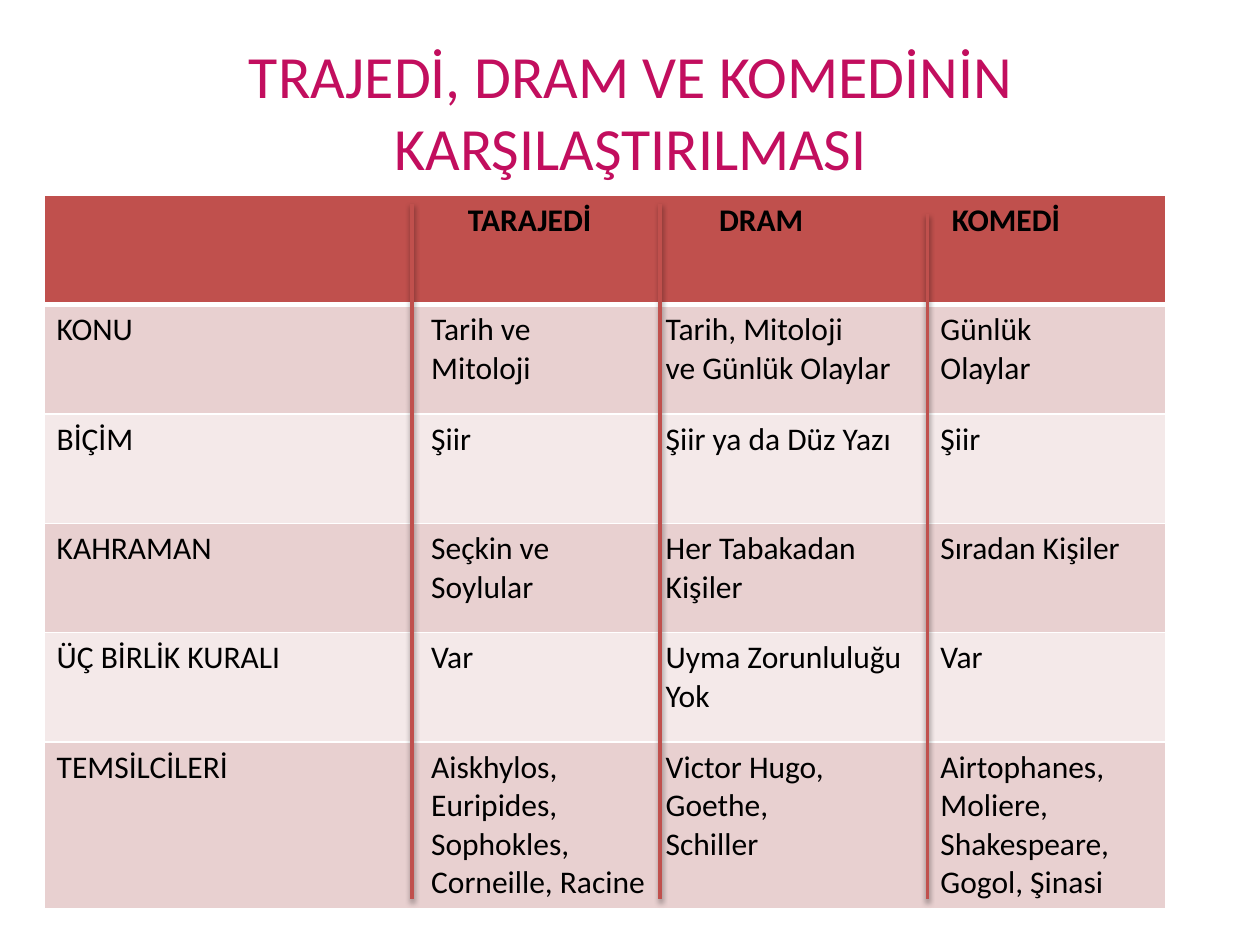
"""Build a slide comparing tragedy, drama and comedy in a table."""
from lxml import etree
from pptx import Presentation
from pptx.dml.color import RGBColor
from pptx.enum import shapes, text
from pptx.oxml import ns, parse_xml
from pptx.util import Pt

COLORS = {
    "title": "C20E5E",
    "text": "000000",
    "accent": "C0504D",
    "dark_band": "E8D0D0",
    "light_band": "F4E9E9",
    "border": "FFFFFF",
    "shadow": "000000",
}
FONT = "Calibri"
HEADER_STOPS = (235, 378.5, 511.5)
BODY_STOPS = (214, 348, 505)
ROW_HEIGHT = 62.5
DIVIDERS = ((235.4, 116.6), (377.3, 116.6), (529.9, 122.4))
DIVIDER_END = 514
TITLE = "TRAJEDİ, DRAM VE KOMEDİNİN KARŞILAŞTIRILMASI"
ROWS = [
    [("", "TARAJEDİ", "DRAM", "KOMEDİ")],
    [("KONU", "Tarih ve", "Tarih, Mitoloji", "Günlük"),
     ("", "Mitoloji", "ve Günlük Olaylar", "Olaylar")],
    [("BİÇİM", "Şiir", "Şiir ya da Düz Yazı", "Şiir")],
    [("KAHRAMAN", "Seçkin ve", "Her Tabakadan", "Sıradan Kişiler"),
     ("", "Soylular", "Kişiler")],
    [("ÜÇ BİRLİK KURALI", "Var", "Uyma Zorunluluğu", "Var"),
     ("", "", "Yok")],
    [("TEMSİLCİLERİ", "Aiskhylos,", "Victor Hugo,", "Airtophanes,"),
     ("", "Euripides,", "Goethe,", "Moliere,"),
     ("", "Sophokles,", "Schiller", "Shakespeare,"),
     ("", "Corneille, Racine", "", "Gogol, Şinasi")],
]


def rgb(name):
    return RGBColor.from_string(COLORS[name])


def apply(target, formats):
    for attribute, value in formats.items():
        setattr(target, attribute, value)


def style_font(font, size, color, bold=False):
    apply(font, {"name": FONT, "size": Pt(size), "bold": bold})
    font.color.rgb = rgb(color)


def add_title(slide):
    title = slide.shapes.title
    apply(title, {"left": Pt(14.4), "top": Pt(20.9),
                  "width": Pt(692), "height": Pt(85)})
    frame = title.text_frame
    apply(frame, {"text": TITLE, "word_wrap": True,
                  "auto_size": text.MSO_AUTO_SIZE.NONE,
                  "vertical_anchor": text.MSO_ANCHOR.MIDDLE})
    heading = frame.paragraphs[0]
    heading.alignment = text.PP_ALIGN.CENTER
    style_font(heading.runs[0].font, 34.2, "title")


def set_tab_stops(paragraph, stops):
    tabs = etree.SubElement(paragraph._p.get_or_add_pPr(), ns.qn("a:tabLst"))
    for stop in stops:
        etree.SubElement(tabs, ns.qn("a:tab"), pos=str(Pt(stop)), algn="l")


def set_borders(cell, top, bottom):
    properties = cell._tc.get_or_add_tcPr()
    for side, width in {"L": 1, "R": 1, "T": top, "B": bottom}.items():
        properties.append(parse_xml(
            f'<a:ln{side} {ns.nsdecls("a")} w="{Pt(width)}"><a:solidFill>'
            f'<a:srgbClr val="{COLORS["border"]}"/></a:solidFill></a:ln{side}>'))


def fill_cell(cell, lines, fill, stops, bold):
    cell.fill.solid()
    cell.fill.fore_color.rgb = rgb(fill)
    frame = cell.text_frame
    for index, parts in enumerate(lines):
        paragraph = frame.add_paragraph() if index else frame.paragraphs[0]
        set_tab_stops(paragraph, stops)
        run = paragraph.add_run()
        run.text = "\t".join(parts)
        style_font(run.font, 18, "text", bold)


def add_comparison(slide):
    frame = slide.shapes.add_table(len(ROWS), 1, Pt(25.2), Pt(111.6),
                                   Pt(640.8), Pt(ROW_HEIGHT * len(ROWS)))
    table = frame.table
    apply(table, {"first_row": False, "horz_banding": False})
    for index, lines in enumerate(ROWS):
        header = index == 0
        cell = table.cell(index, 0)
        set_borders(cell, 3 if index == 1 else 1, 3 if header else 1)
        band = "dark_band" if index % 2 else "light_band"
        fill_cell(cell, lines, "accent" if header else band,
                  HEADER_STOPS if header else BODY_STOPS, header)


def add_divider(slide, x, top):
    divider = slide.shapes.add_connector(
        shapes.MSO_CONNECTOR.STRAIGHT, Pt(x), Pt(top), Pt(x), Pt(DIVIDER_END))
    divider.line.color.rgb = rgb("accent")
    divider.line.width = Pt(2)
    divider._element.spPr.append(parse_xml(
        f'<a:effectLst {ns.nsdecls("a")}><a:outerShdw blurRad="{Pt(3.1)}" '
        f'dist="{Pt(1.6)}" dir="5400000" rotWithShape="0">'
        f'<a:srgbClr val="{COLORS["shadow"]}"><a:alpha val="38000"/>'
        '</a:srgbClr></a:outerShdw></a:effectLst>'))


def main():
    deck = Presentation()
    apply(deck, {"slide_width": Pt(720), "slide_height": Pt(540)})
    slide = deck.slides.add_slide(deck.slide_layouts[5])
    add_title(slide)
    add_comparison(slide)
    for x, top in DIVIDERS:
        add_divider(slide, x, top)
    deck.save("out.pptx")


if __name__ == "__main__":
    main()
